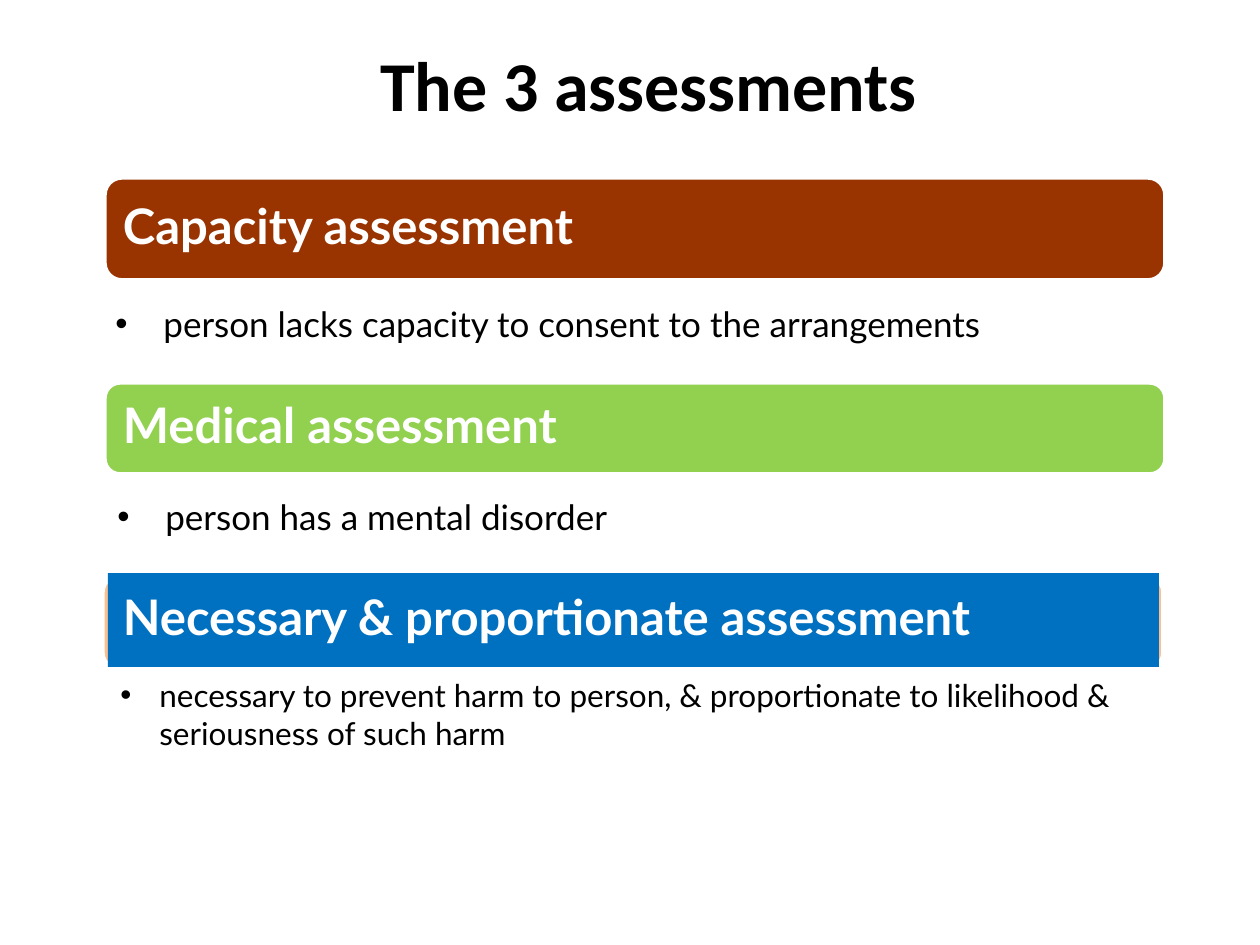
"""Build a slide that lists the three assessments, each with a coloured heading and a note."""
import pptx
import pptx.dml.color
import pptx.enum.shapes
import pptx.enum.text
import pptx.oxml.ns
import pptx.util
from lxml import etree

SCALE = 914400 / 126
SLIDE_SIZE = (1260, 945)
COLOURS = {
    "black": "000000", "white": "FFFFFF", "rust": "993300",
    "green": "92D050", "peach": "FAC090", "blue": "0070C0",
}
TITLE = {"text": "The 3 assessments", "at": (113, 16, 1071, 135)}
TITLE_FONT = {"name": "Calibri", "size": 40, "bold": True, "color": "black"}
HEADING_FONT = {"name": "Lato", "size": 28, "bold": True, "color": "white"}
NOTE_FONT = {"name": "Lato", "size": 20, "bold": False, "color": "black"}
LABEL_INSET = 15
ASSESSMENTS = [
    {"heading": "Capacity assessment", "bar": (105, 178, 1060, 102), "bar_fill": "rust",
     "label": (108, 183, 1051, 92), "label_fill": None,
     "note": "person lacks capacity to consent to the arrangements",
     "note_at": (103, 296, 961, 55), "note_size": 20, "indent": 48},
    {"heading": "Medical assessment", "bar": (105, 383, 1060, 91), "bar_fill": "green",
     "label": (108, 387, 1051, 82), "label_fill": None,
     "note": "person has a mental disorder",
     "note_at": (105, 489, 1068, 55), "note_size": 20, "indent": 48},
    {"heading": "Necessary & proportionate assessment", "bar": (103, 577, 1060, 91),
     "bar_fill": "peach", "label": (108, 573, 1051, 94), "label_fill": "blue",
     "note": "necessary to prevent harm to person, & proportionate to likelihood "
             "& seriousness of such harm",
     "note_at": (108, 670, 1051, 89), "note_size": 18, "indent": 39},
]


def px(length):
    return pptx.util.Emu(round(length * SCALE))


def colour(name):
    return pptx.dml.color.RGBColor.from_string(COLOURS[name])


def set_all(target, values):
    for name, value in values.items():
        setattr(target, name, value)


def write(box, text, font, anchor, **paragraph_format):
    set_all(box.text_frame, {"word_wrap": True, "vertical_anchor": anchor})
    para = box.text_frame.paragraphs[0]
    set_all(para, paragraph_format)
    span = para.add_run()
    span.text = text
    set_all(span.font, {"name": font["name"], "size": pptx.util.Pt(font["size"]),
                        "bold": font["bold"]})
    span.font.color.rgb = colour(font["color"])
    return para


def add_bar(page, at, fill):
    bar = page.shapes.add_shape(
        pptx.enum.shapes.MSO_SHAPE.ROUNDED_RECTANGLE, *map(px, at))
    bar.shadow.inherit = False
    bar.fill.solid()
    bar.fill.fore_color.rgb = colour(fill)
    bar.line.color.rgb = colour("white")
    bar.line.width = pptx.util.Pt(2)


def add_label(page, at, text, fill):
    label = page.shapes.add_textbox(*map(px, at))
    if fill:
        label.fill.solid()
        label.fill.fore_color.rgb = colour(fill)
    sides = ("left", "top", "right", "bottom")
    set_all(label.text_frame, {f"margin_{side}": px(LABEL_INSET) for side in sides})
    write(label, text, HEADING_FONT, pptx.enum.text.MSO_ANCHOR.MIDDLE, line_spacing=0.9)


def add_note(page, at, text, size, indent):
    note = page.shapes.add_textbox(*map(px, at))
    para = write(note, text, {**NOTE_FONT, "size": size}, pptx.enum.text.MSO_ANCHOR.TOP)
    properties = para._p.get_or_add_pPr()
    properties.set("marL", str(px(indent)))
    properties.set("indent", str(-px(indent)))
    etree.SubElement(properties, pptx.oxml.ns.qn("a:buFont"), typeface="Arial")
    etree.SubElement(properties, pptx.oxml.ns.qn("a:buChar"), char="•")


def main():
    deck = pptx.Presentation()
    deck.slide_width, deck.slide_height = map(px, SLIDE_SIZE)
    page = deck.slides.add_slide(deck.slide_layouts[5])
    title = page.shapes.title
    set_all(title, dict(zip(("left", "top", "width", "height"), map(px, TITLE["at"]))))
    write(title, TITLE["text"], TITLE_FONT, pptx.enum.text.MSO_ANCHOR.MIDDLE,
          alignment=pptx.enum.text.PP_ALIGN.CENTER)
    for item in ASSESSMENTS:
        add_bar(page, item["bar"], item["bar_fill"])
        add_label(page, item["label"], item["heading"], item["label_fill"])
        add_note(page, item["note_at"], item["note"], item["note_size"], item["indent"])
    deck.save("out.pptx")


if __name__ == "__main__":
    main()
